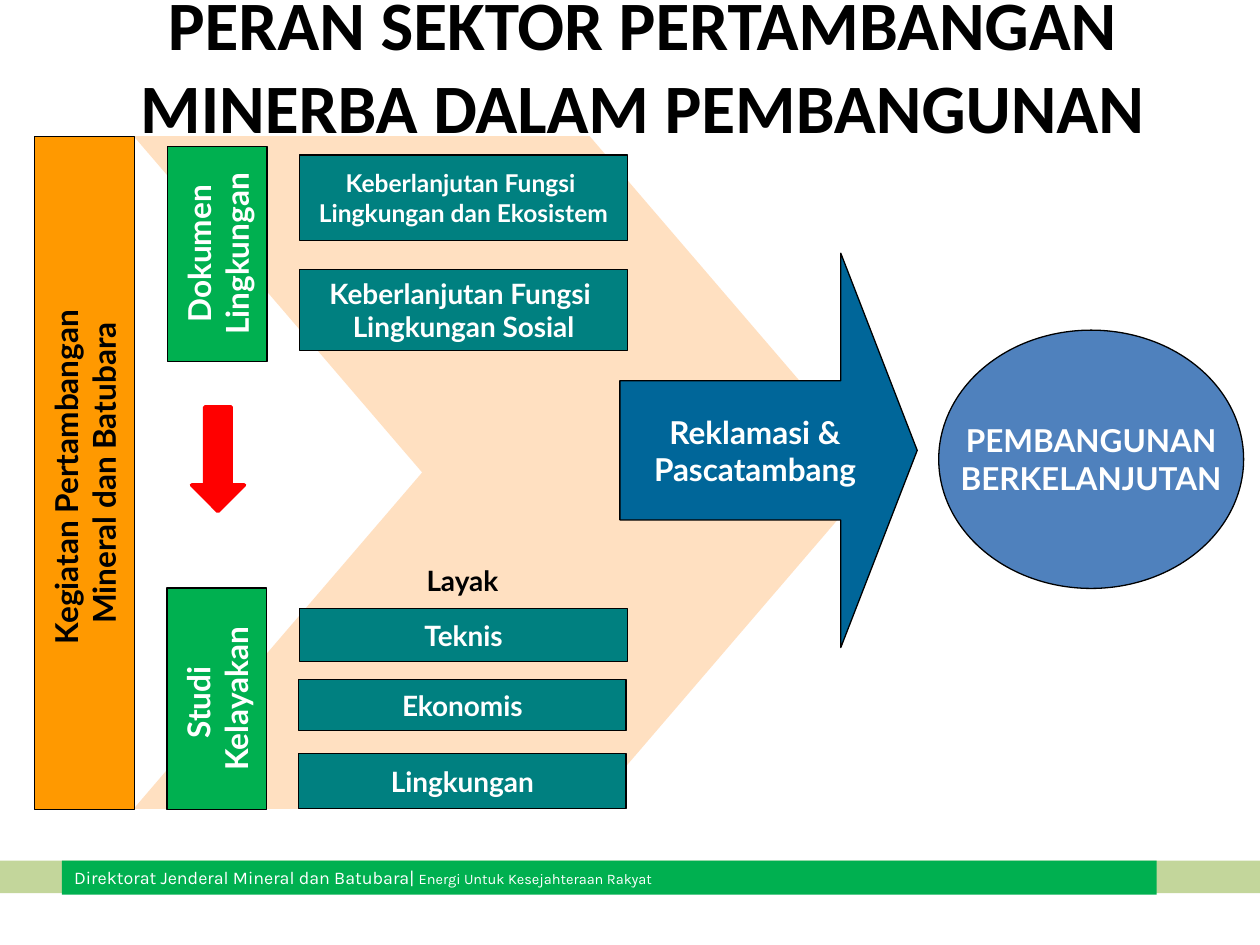
from dataclasses import dataclass

from lxml.etree import SubElement
from pptx import Presentation
from pptx.dml.color import RGBColor
from pptx.enum.shapes import MSO_SHAPE
from pptx.enum.text import MSO_ANCHOR, MSO_AUTO_SIZE, PP_ALIGN
from pptx.oxml.ns import qn
from pptx.util import Inches, Pt

BLACK, WHITE = "000000", "FFFFFF"
TEAL, GREEN, RED = "008080", "00B050", "FF0000"


@dataclass
class Box:
    left: float
    top: float
    width: float
    height: float
    fill: str
    text: str = ""
    size: float = 18
    color: str = WHITE
    kind: MSO_SHAPE = MSO_SHAPE.RECTANGLE
    line: str | None = BLACK
    weight: float = 0.75
    turn: int = 0
    adjust: tuple[float, ...] = ()


def paint(target, color: str) -> None:
    target.solid()
    target.fore_color.rgb = RGBColor.from_string(color)


def style(run, size: float, color: str, font: str, bold: bool) -> None:
    run.font.size, run.font.name, run.font.bold = Pt(size), font, bold
    paint(run.font.fill, color)


def write(shape, text: str, size: float = 18, color: str = WHITE,
          font: str = "Lato", bold: bool = True, wrap: bool = False,
          paras: bool = False) -> None:
    """Centre the text; line ends are breaks, or new paragraphs if asked."""
    frame = shape.text_frame
    frame.word_wrap = wrap
    frame.vertical_anchor = MSO_ANCHOR.MIDDLE
    for i, part in enumerate(text.split("\n") if paras else [text]):
        para = frame.add_paragraph() if i else frame.paragraphs[0]
        para.text = part
        para.alignment = PP_ALIGN.CENTER
        for run in para.runs:
            style(run, size, color, font, bold)


def draw(shapes, box: Box):
    shape = shapes.add_shape(box.kind, Inches(box.left), Inches(box.top),
                             Inches(box.width), Inches(box.height))
    shape.shadow.inherit = False
    shape.rotation = box.turn
    for i, value in enumerate(box.adjust):
        shape.adjustments[i] = value
    paint(shape.fill, box.fill)
    if box.line:
        paint(shape.line.fill, box.line)
        shape.line.width = Pt(box.weight)
    else:
        shape.line.fill.background()
    if box.text:
        write(shape, box.text, size=box.size, color=box.color,
              paras=box.kind == MSO_SHAPE.OVAL)
    return shape


def label(shapes, left: float, top: float, width: float, height: float,
          text: str, **form) -> None:
    area = shapes.add_textbox(Inches(left), Inches(top),
                              Inches(width), Inches(height))
    write(area, text, color=BLACK, **form)


def main() -> None:
    deck = Presentation()
    deck.slide_width, deck.slide_height = Inches(10), Inches(7.5)
    shapes = deck.slides.add_slide(deck.slide_layouts[6]).shapes

    # Pale chevron behind everything
    back = draw(shapes, Box(1.06, 1.08, 5.91, 5.34, "FFCC99", line=None,
                            kind=MSO_SHAPE.CHEVRON, adjust=(0.429,)))
    tint = back.fill._xPr.find(qn("a:solidFill"))[0]
    SubElement(tint, qn("a:alpha"), val="60000")

    # Title
    label(shapes, 0.6, 0.1, 9, 0.82,
          "PERAN SEKTOR PERTAMBANGAN MINERBA DALAM PEMBANGUNAN",
          size=39.6, font="Calibri", wrap=True)

    # Teal goals
    group = shapes.add_group_shape().shapes
    for left, top, height, text, size in (
        (2.38, 1.23, 0.68,
         "Keberlanjutan Fungsi \nLingkungan dan Ekosistem", 14),
        (2.37, 5.39, 0.41, "Ekonomis", 16),
        (2.38, 2.14, 0.64, "Keberlanjutan Fungsi \nLingkungan Sosial", 16),
        (2.37, 5.98, 0.44, "Lingkungan", 16),
    ):
        draw(group, Box(left, top, 2.6, height, TEAL, text, size))

    # Outcome, upright bars and the last goal
    for box in (
        Box(4.92, 2.01, 2.36, 3.13, "006699", "Reklamasi &\nPascatambang",
            kind=MSO_SHAPE.RIGHT_ARROW, adjust=(0.353, 0.257)),
        Box(7.45, 2.62, 2.42, 2.05, "4F81BD", "PEMBANGUNAN\nBERKELANJUTAN",
            kind=MSO_SHAPE.OVAL),
        Box(-2, 3.36, 5.34, 0.79, "FF9900",
            "Kegiatan Pertambangan \nMineral dan Batubara",
            color=BLACK, turn=270),
        Box(0.87, 1.62, 1.71, 0.79, GREEN, "Dokumen\nLingkungan", turn=270),
        Box(0.84, 5.15, 1.76, 0.79, GREEN, "Studi \nKelayakan", turn=270),
        Box(2.38, 4.83, 2.6, 0.42, TEAL, "Teknis", 16),
    ):
        draw(shapes, box)
    label(shapes, 2.37, 4.45, 2.6, 0.31, "Layak", size=16)
    draw(shapes, Box(1.52, 3.23, 0.42, 0.83, RED, line=RED, weight=2,
                     kind=MSO_SHAPE.DOWN_ARROW))

    # Footer
    draw(shapes, Box(0, 6.83, 10, 0.26, "C3D69B", line=None))
    foot = draw(shapes, Box(0.49, 6.83, 8.69, 0.27, GREEN, line=None))
    frame = foot.text_frame
    frame.word_wrap = True
    frame.auto_size = MSO_AUTO_SIZE.SHAPE_TO_FIT_TEXT
    frame.vertical_anchor = MSO_ANCHOR.TOP
    para = frame.paragraphs[0]
    para.alignment = PP_ALIGN.LEFT
    for text, size in (("Direktorat Jenderal Mineral dan Batubara| ", 10.2),
                       ("Energi Untuk Kesejahteraan Rakyat", 8.3)):
        run = para.add_run()
        run.text = text
        style(run, size, WHITE, "Karla", False)

    deck.save("out.pptx")


if __name__ == "__main__":
    main()
